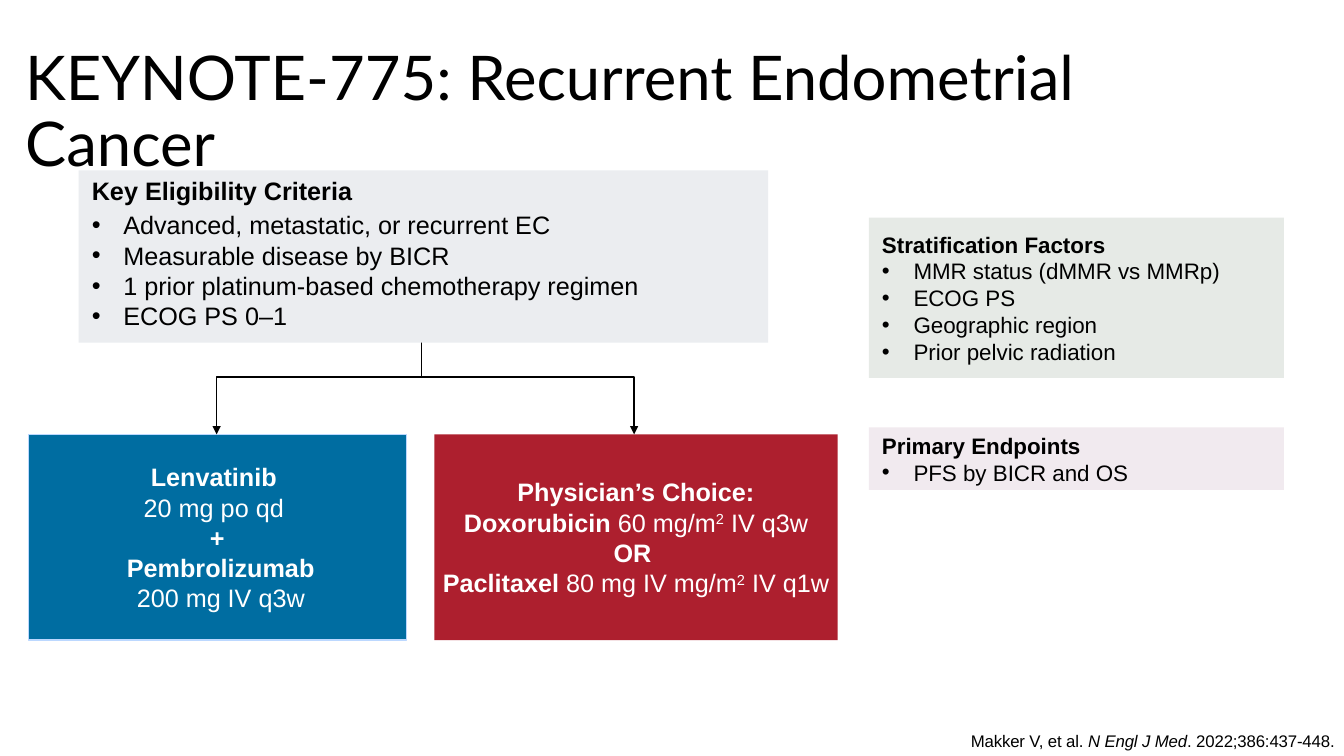
from dataclasses import dataclass

from lxml.etree import SubElement
from pptx import Presentation
from pptx.dml.color import RGBColor
from pptx.enum.shapes import MSO_CONNECTOR as Connector, MSO_SHAPE as Shape
from pptx.enum.text import MSO_ANCHOR as Anchor, MSO_AUTO_SIZE as AutoSize, PP_ALIGN as Align
from pptx.oxml.ns import qn
from pptx.util import Pt


@dataclass(frozen=True)
class Theme:
    black: str = "000000"
    white: str = "FFFFFF"
    eligibility: str = "EBEDF0"
    combination: str = "006DA1"
    combination_edge: str = "BCD8FF"
    chemotherapy: str = "AD1F2E"
    stratification: str = "0D3612"
    endpoints: str = "7E3864"
    title_font: str = "Lato"
    body_font: str = "Arial"
    title_size: float = 44
    study_size: float = 18
    side_size: float = 16
    citation_size: float = 12


THEME = Theme()
TINT = 10  # opacity of the side panels, in percent
BULLET_INDENT = Pt(22.5)


def write(paragraph, text, *, size, color=THEME.black, font=THEME.body_font,
          bold=False, italic=False, superscript=False, tracking=None):
    """Add one formatted run to a paragraph."""
    run = paragraph.add_run()
    run.text = text
    run.font.name, run.font.size = font, Pt(size)
    run.font.bold, run.font.italic = bold, italic
    run.font.color.rgb = RGBColor.from_string(color)
    properties = run._r.get_or_add_rPr()
    if superscript:
        properties.set("baseline", "30000")
    if tracking is not None:
        properties.set("spc", str(round(tracking * 100)))


def next_paragraph(frame, index):
    return frame.add_paragraph() if index else frame.paragraphs[0]


def add_bullet(paragraph):
    properties = paragraph._p.get_or_add_pPr()
    properties.set("marL", str(BULLET_INDENT))
    properties.set("indent", str(-BULLET_INDENT))
    SubElement(properties, qn("a:buFont")).set("typeface", THEME.body_font)
    SubElement(properties, qn("a:buChar")).set("char", "•")


def add_panel(slide, box, fill, *, insets, anchor=Anchor.MIDDLE, opacity=None, edge=None):
    """Draw a filled rectangle and return its text frame."""
    shape = slide.shapes.add_shape(Shape.RECTANGLE, *map(Pt, box))
    shape.shadow.inherit = False
    shape.fill.solid()
    shape.fill.fore_color.rgb = RGBColor.from_string(fill)
    if opacity is not None:
        color = shape._element.spPr.find(qn("a:solidFill"))[0]
        SubElement(color, qn("a:alpha")).set("val", str(opacity * 1000))
    if edge:
        shape.line.color.rgb = RGBColor.from_string(edge)
        shape.line.width = Pt(0.75)
    else:
        shape.line.fill.background()
    frame = shape.text_frame
    frame.word_wrap = True
    frame.vertical_anchor = anchor
    (frame.margin_left, frame.margin_top,
     frame.margin_right, frame.margin_bottom) = map(Pt, insets)
    return frame


def add_title(slide, box, text):
    title = slide.shapes.title
    title.left, title.top, title.width, title.height = map(Pt, box)
    frame = title.text_frame
    frame.auto_size = AutoSize.NONE
    frame.word_wrap = True
    frame.vertical_anchor = Anchor.MIDDLE
    paragraph = frame.paragraphs[0]
    paragraph.alignment, paragraph.line_spacing = Align.LEFT, 0.9
    write(paragraph, text, size=THEME.title_size, font=THEME.title_font)


def add_criteria(slide, box, heading, items, *, fill, size, gap=0, top=9.4, **panel):
    """A bold heading above a bulleted list."""
    frame = add_panel(slide, box, fill, insets=(9.4, top, 9.4, 9.4), **panel)
    for index, text in enumerate([heading, *items]):
        paragraph = next_paragraph(frame, index)
        paragraph.alignment = Align.LEFT
        if index:
            add_bullet(paragraph)
        if index == 1 and gap:
            paragraph.space_before = Pt(gap)
        write(paragraph, text, size=size, bold=index == 0)


def add_arm(slide, box, lines, *, fill, edge=None):
    """A treatment arm; each line is a list of (text, format) pairs."""
    frame = add_panel(slide, box, fill, insets=(0, 0, 0, 0), edge=edge)
    for index, line in enumerate(lines):
        paragraph = next_paragraph(frame, index)
        paragraph.alignment = Align.CENTER
        for text, style in line:
            write(paragraph, text, size=THEME.study_size, color=THEME.white, **style)


def add_line(slide, start, end, *, bent_arrow=False):
    kind = Connector.ELBOW if bent_arrow else Connector.STRAIGHT
    connector = slide.shapes.add_connector(kind, *map(Pt, (*start, *end)))
    connector.line.color.rgb = RGBColor.from_string(THEME.black)
    connector.line.width = Pt(1)
    properties = connector._element.spPr
    if bent_arrow:
        properties.find(qn("a:prstGeom")).set("prst", "bentConnector2")
        SubElement(properties.find(qn("a:ln")), qn("a:tailEnd")).set("type", "triangle")
    SubElement(properties, qn("a:effectLst"))


def add_split(slide, stem, branch_y, targets):
    """A stem that divides into one arrow per target."""
    x, _ = stem
    for target in targets:
        add_line(slide, (x, branch_y), target, bent_arrow=True)
    add_line(slide, stem, (x, branch_y))


def add_citation(slide, box, parts):
    frame = slide.shapes.add_textbox(*map(Pt, box)).text_frame
    frame.word_wrap = True
    frame.auto_size = AutoSize.SHAPE_TO_FIT_TEXT
    paragraph = frame.paragraphs[0]
    paragraph.alignment = Align.RIGHT
    for text, italic in parts:
        write(paragraph, text, size=THEME.citation_size, italic=italic, tracking=-0.1)


def build_study_slide(presentation):
    slide = presentation.slides.add_slide(presentation.slide_layouts[5])
    add_title(slide, (10.8, 28.8, 883.4, 104.4),
              "KEYNOTE-775: Recurrent Endometrial Cancer")

    # Treatment arms
    bold, plain, raised = {"bold": True}, {}, {"superscript": True}
    arm_top, arm_height = 310.3, 146.9
    add_arm(slide, (20.2, arm_top, 270, arm_height), [
        [("Lenvatinib ", bold)],
        [("20 mg po qd ", plain)],
        [("+", bold)],
        [(" Pembrolizumab", bold)],
        [(" ", bold), ("200 mg IV q3w", plain)],
    ], fill=THEME.combination, edge=THEME.combination_edge)
    add_arm(slide, (310.3, arm_top, 288, arm_height), [
        [("Physician’s Choice:", bold)],
        [("Doxorubicin ", bold), ("60 mg/m", plain), ("2", raised), (" IV q3w", plain)],
        [("OR ", bold)],
        [("Paclitaxel ", bold), ("80 mg IV mg/m", plain), ("2", raised), (" IV q1w", plain)],
    ], fill=THEME.chemotherapy)

    # Side panels
    side_left, side_width = 620.6, 296.6
    side = {"size": THEME.side_size, "opacity": TINT}
    add_criteria(slide, (side_left, 305.3, side_width, 44.6), "Primary Endpoints",
                 ["PFS by BICR and OS"], fill=THEME.endpoints, **side)
    add_criteria(slide, (side_left, 155.5, side_width, 114.5), "Stratification Factors",
                 ["MMR status (dMMR vs MMRp)", "ECOG PS", "Geographic region",
                  "Prior pelvic radiation"], fill=THEME.stratification, **side)

    # Split from eligibility to the arms
    add_split(slide, (301, 241.2), 269.2, [(154.8, arm_top), (452.9, arm_top)])

    # Citation and eligibility
    add_citation(slide, (682.6, 518.4, 277.9, 21.6), [
        ("Makker V, et al. ", False), ("N Engl J Med", True), (". 2022;386:437-448.", False)])
    add_criteria(slide, (56.2, 121.7, 492.5, 123.1), "Key Eligibility Criteria",
                 ["Advanced, metastatic, or recurrent EC", "Measurable disease by BICR",
                  "1 prior platinum-based chemotherapy regimen", "ECOG PS 0–1"],
                 fill=THEME.eligibility, size=THEME.study_size, gap=3, top=3.6,
                 anchor=Anchor.TOP)


def main():
    presentation = Presentation()
    presentation.slide_width, presentation.slide_height = Pt(960), Pt(540)
    build_study_slide(presentation)
    presentation.save("out.pptx")


if __name__ == "__main__":
    main()
